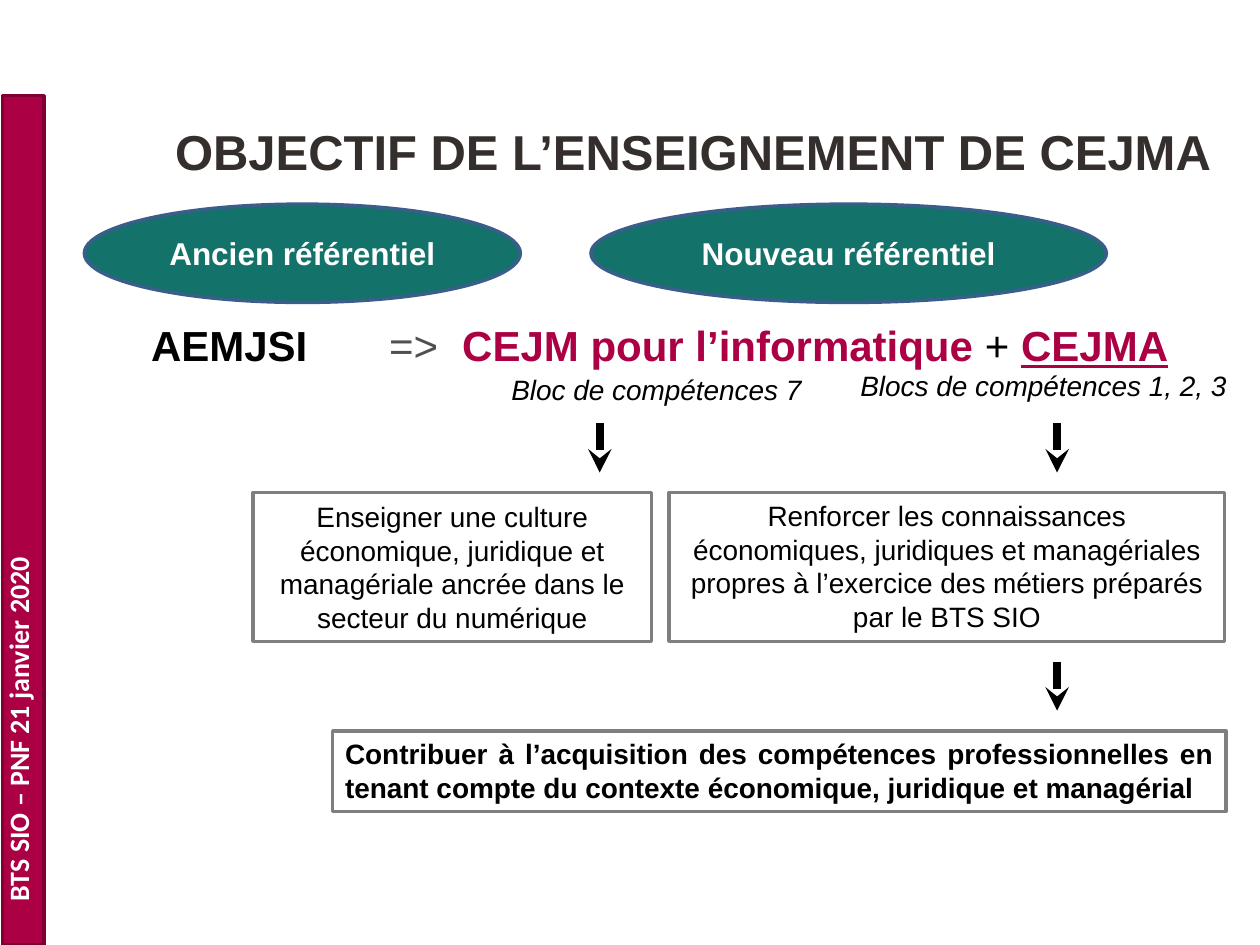
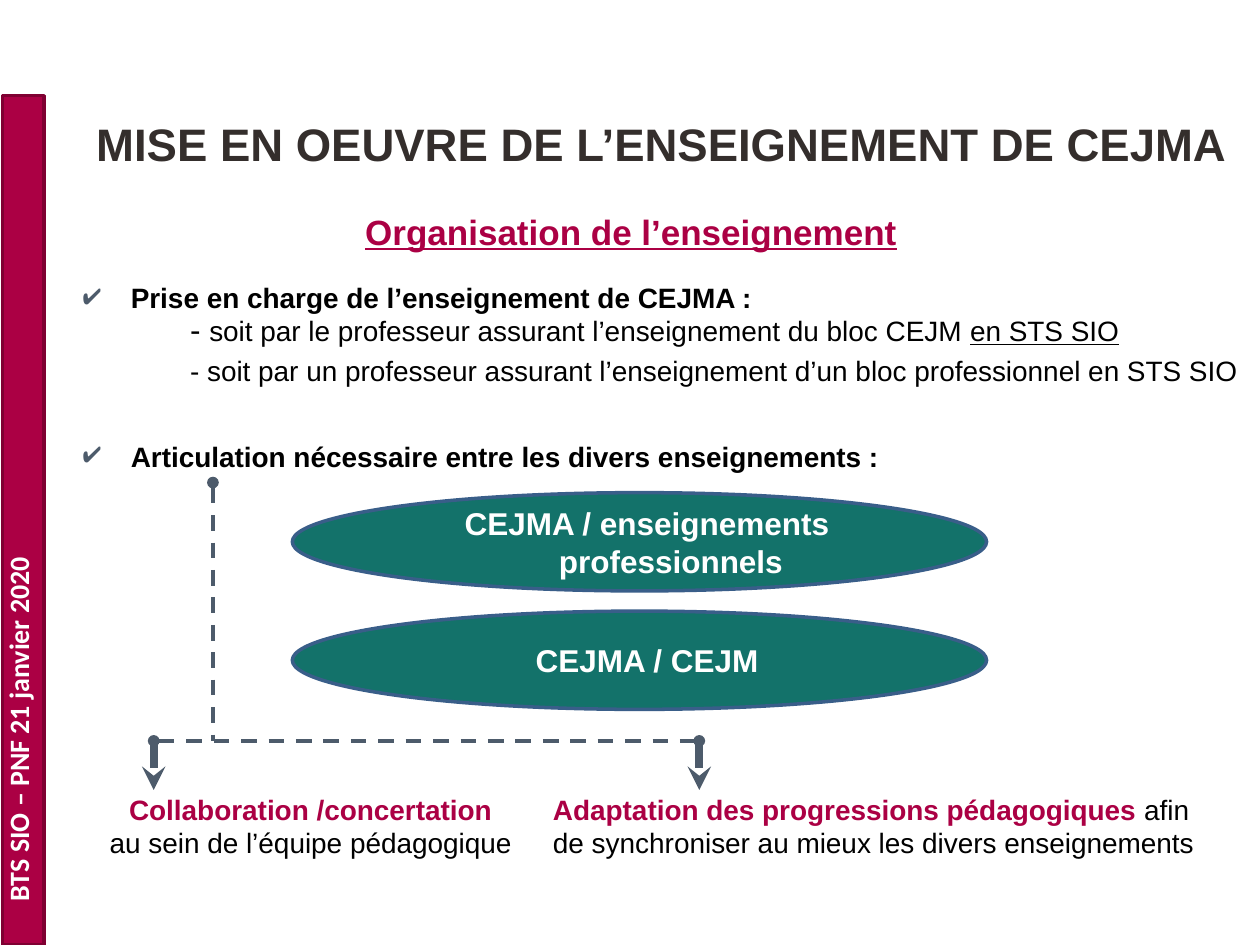
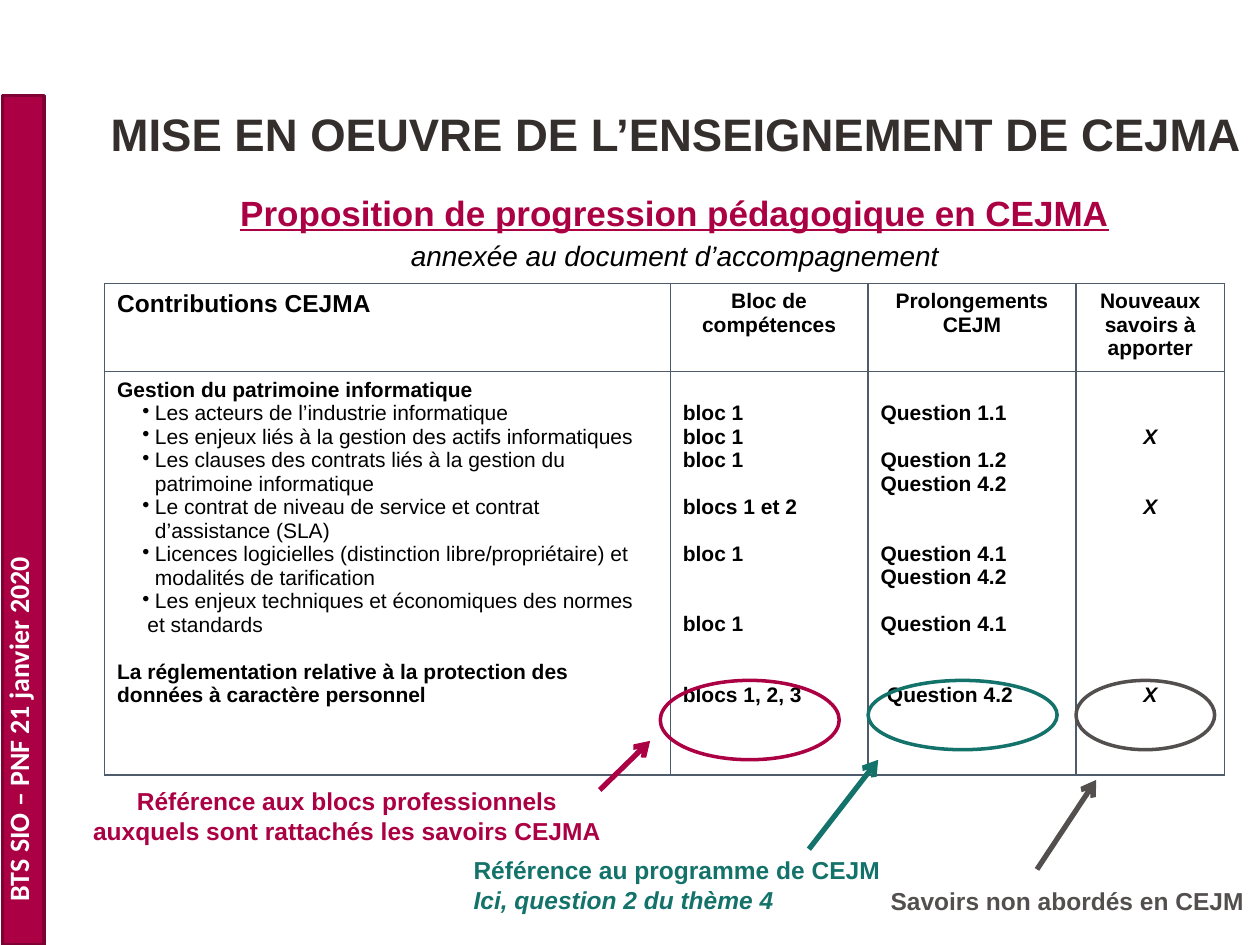
from dataclasses import dataclass
from typing import Optional

from lxml.etree import SubElement
from pptx import Presentation
from pptx.dml.color import RGBColor
from pptx.enum.dml import MSO_LINE
from pptx.enum.shapes import MSO_CONNECTOR, MSO_SHAPE
from pptx.enum.text import MSO_ANCHOR, PP_ALIGN
from pptx.oxml import parse_xml
from pptx.oxml.ns import nsdecls, qn
from pptx.util import Inches, Pt


# Colours, fonts and type sizes
@dataclass(frozen=True)
class Theme:
    crimson: str = "AB0044"
    crimson_edge: str = "7F0032"
    teal: str = "13726A"
    blue_edge: str = "395E89"
    slate: str = "4D5B6B"
    grey: str = "544F4F"
    box_edge: str = "7F7F7F"
    title: str = "342E2C"
    black: str = "000000"
    white: str = "FFFFFF"
    font: str = "Arial"
    side_font: str = "Calibri"
    title_size: int = 26
    lead_size: int = 24
    subtitle_size: int = 20
    oval_size: int = 18
    body_size: int = 16
    note_size: int = 14
    cell_size: int = 12
    cell_line: float = 13.4


THEME = Theme()


@dataclass
class Run:
    text: str
    color: Optional[str] = None
    bold: Optional[bool] = None
    italic: Optional[bool] = None
    underline: Optional[bool] = None
    size: Optional[float] = None


@dataclass
class Para:
    runs: object
    color: Optional[str] = THEME.black
    bold: Optional[bool] = None
    italic: Optional[bool] = None
    underline: Optional[bool] = None
    size: Optional[float] = THEME.body_size
    font: str = THEME.font
    align: Optional[PP_ALIGN] = None
    left: float = 0
    first: float = 0
    before: float = 0
    bullet: str = ""
    bullet_color: str = THEME.black
    tabs: tuple = ()


CENTER = PP_ALIGN.CENTER


def rgb(value):
    return RGBColor.from_string(value)


def style_font(font, style):
    for name in ("bold", "italic", "underline"):
        if getattr(style, name) is not None:
            setattr(font, name, getattr(style, name))
    if style.size:
        font.size = Pt(style.size)
    if style.color:
        font.color.rgb = rgb(style.color)


class Deck:
    def __init__(self, theme):
        self.theme = theme
        self.prs = Presentation()
        self.prs.slide_width, self.prs.slide_height = Inches(10), Inches(7.5)
        self.slide = None

    # Slide with its side band
    def new_slide(self):
        t = self.theme
        self.slide = self.prs.slides.add_slide(self.prs.slide_layouts[6])
        self.shape((0.02, 0.76, 0.33, 6.74), MSO_SHAPE.RECTANGLE, t.crimson, t.crimson_edge)
        label = self.text((-0.04, 0.35, 0.47, 6.9),
                          [Para("BTS SIO – PNF 21 janvier 2020", t.white, bold=True, font=t.side_font)])
        label.text_frame._txBody.bodyPr.set("vert", "vert270")

    def put_paras(self, frame, paras):
        for i, para in enumerate(paras):
            p = frame.paragraphs[0] if i == 0 else frame.add_paragraph()
            props = p._p.get_or_add_pPr()
            if para.left or para.first:
                props.set("marL", str(Inches(para.left)))
                props.set("indent", str(Inches(para.first)))
            if para.align is not None:
                p.alignment = para.align
            if para.before:
                p.space_before = Pt(para.before)
            if para.bullet:
                color = SubElement(props, qn("a:buClr"))
                SubElement(color, qn("a:srgbClr"), val=para.bullet_color)
                SubElement(props, qn("a:buChar"), char=para.bullet)
            if para.tabs:
                stops = SubElement(props, qn("a:tabLst"))
                for stop in para.tabs:
                    SubElement(stops, qn("a:tab"), pos=str(Inches(stop)), algn="l")
            p.font.name = para.font
            style_font(p.font, para)
            runs = [Run(para.runs)] if isinstance(para.runs, str) else para.runs
            for part in runs:
                run = p.add_run()
                run.text = part.text
                style_font(run.font, part)

    def text(self, at, paras, anchor=MSO_ANCHOR.TOP):
        box = self.slide.shapes.add_textbox(*map(Inches, at))
        box.text_frame.word_wrap = True
        box.text_frame.vertical_anchor = anchor
        self.put_paras(box.text_frame, paras)
        return box

    def title(self, at, text, size=THEME.title_size):
        self.text(at, [Para(text, self.theme.title, bold=True, size=size, align=CENTER)],
                  MSO_ANCHOR.MIDDLE)

    def shape(self, at, kind, fill, edge, paras=(), anchor=MSO_ANCHOR.MIDDLE):
        shape = self.slide.shapes.add_shape(kind, *map(Inches, at))
        shape.shadow.inherit = False
        if fill:
            shape.fill.solid()
            shape.fill.fore_color.rgb = rgb(fill)
        else:
            shape.fill.background()
        shape.line.color.rgb = rgb(edge)
        shape.line.width = Pt(2)
        shape.text_frame.word_wrap = True
        shape.text_frame.vertical_anchor = anchor
        self.put_paras(shape.text_frame, paras)

    def oval(self, at, text, left=0, first=0):
        t = self.theme
        self.shape(at, MSO_SHAPE.OVAL, t.teal, t.blue_edge,
                   [Para(text, t.white, bold=True, size=t.oval_size, align=CENTER,
                         left=left, first=first)])

    def frame(self, at, paras, anchor=MSO_ANCHOR.TOP):
        self.shape(at, MSO_SHAPE.RECTANGLE, self.theme.white, self.theme.box_edge, paras, anchor)

    def line(self, start, end, color, width, head=None, tail=None, dashed=False):
        line = self.slide.shapes.add_connector(MSO_CONNECTOR.STRAIGHT, *map(Inches, (*start, *end)))
        line.line.color.rgb = rgb(color)
        line.line.width = Pt(width)
        if dashed:
            line.line.dash_style = MSO_LINE.DASH
        props = line._element.spPr
        for tag, kind in (("a:headEnd", head), ("a:tailEnd", tail)):
            if kind:
                SubElement(props.get_or_add_ln(), qn(tag), type=kind)
        SubElement(props, qn("a:effectLst"))

    def down_arrow(self, x, y, color):
        self.line((x, y), (x, y + 0.39), color, 4.5, tail="stealth")

    # Bordered table; each cell is (paragraphs, lines left free above)
    def table(self, at, widths, heights, rows):
        table = self.slide.shapes.add_table(len(rows), len(widths), *map(Inches, at)).table
        table.first_row = table.horz_banding = False
        for column, width in zip(table.columns, widths):
            column.width = Inches(width)
        for row, height in zip(table.rows, heights):
            row.height = Inches(height)
        for r, row in enumerate(rows):
            for c, (paras, skipped) in enumerate(row):
                cell = table.cell(r, c)
                cell.fill.background()
                cell.margin_top = Inches(0.05) + Pt(skipped * self.theme.cell_line)
                self.put_paras(cell.text_frame, paras)
                props = cell._tc.get_or_add_tcPr()
                for i, side in enumerate(("lnL", "lnR", "lnT", "lnB")):
                    props.insert(i, parse_xml(
                        f'<a:{side} {nsdecls("a")} w="12700"><a:solidFill>'
                        f'<a:srgbClr val="{self.theme.slate}"/></a:solidFill></a:{side}>'))


def cell_column(entries, **style):
    """Place each (line number, text) entry on its line of the cell."""
    paras, previous = [], entries[0][0] - 1
    for number, text in entries:
        gap = (number - previous - 1) * THEME.cell_line
        paras.append(Para(text, bold=True, size=THEME.cell_size, before=gap, **style))
        previous = number
    return paras, entries[0][0]


# Slide 1: aim of the course
def objective(deck):
    t = deck.theme
    deck.new_slide()
    deck.title((1, 0.84, 9, 0.71), "OBJECTIF DE L’ENSEIGNEMENT DE CEJMA", 28)
    deck.text((0.35, 2.49, 9.41, 0.63), [Para([
        Run("\tAEMJSI", bold=True),
        Run("\t=>", t.grey),
        Run("\tCEJM pour l’informatique ", t.crimson, bold=True),
        Run("+ "),
        Run("CEJMA", t.crimson, bold=True, underline=True),
    ], size=t.lead_size, tabs=(0.75, 2.64, 3.22))])
    deck.oval((0.67, 1.62, 3.46, 0.78), "Ancien référentiel")
    deck.oval((4.69, 1.62, 4.09, 0.78), "Nouveau référentiel")
    deck.text((3.96, 2.91, 2.58, 0.37), [Para("Bloc de compétences 7", italic=True)])
    deck.text((6.73, 2.88, 3.27, 0.37), [Para("Blocs de compétences 1, 2, 3", italic=True)])
    for x, y in ((4.76, 3.36), (8.39, 3.36), (8.39, 5.25)):
        deck.down_arrow(x, y, t.black)
    deck.frame((2.01, 3.91, 3.16, 1.18), [Para(
        "Enseigner une culture économique, juridique et managériale ancrée dans le "
        "secteur du numérique", align=CENTER)], MSO_ANCHOR.MIDDLE)
    deck.frame((5.31, 3.91, 4.41, 1.18), [Para(text, align=CENTER) for text in (
        "Renforcer les connaissances",
        "économiques, juridiques et managériales",
        "propres à l’exercice des métiers préparés par le BTS SIO")])
    deck.frame((2.64, 5.8, 7.09, 0.64), [Para(
        "Contribuer à l’acquisition des compétences professionnelles en tenant compte du "
        "contexte économique, juridique et managérial", bold=True, align=PP_ALIGN.JUSTIFY)])


# Slide 2: how the teaching is organised
def organisation(deck):
    t = deck.theme
    deck.new_slide()
    deck.title((0.51, 0.84, 9.49, 0.59), "MISE EN OEUVRE DE L’ENSEIGNEMENT DE CEJMA")
    deck.text((2.8, 1.62, 4.49, 0.44), [Para("Organisation de l’enseignement", t.crimson,
                                             bold=True, underline=True, size=t.subtitle_size)])
    for y, heading in ((2.18, "Prise en charge de l’enseignement de CEJMA :"),
                       (3.44, "Articulation nécessaire entre les divers enseignements :")):
        deck.text((0.35, y, 8.9, 0.37), [Para(heading, bold=True, left=0.59, first=-0.38,
                                              bullet="✔", bullet_color=t.slate)])
    deck.text((0.91, 2.41, 9.09, 0.79), [
        Para([Run("- ", size=18),
              Run("soit par le professeur assurant l’enseignement du bloc CEJM "),
              Run("en STS SIO", underline=True)], left=0.88, first=-0.38),
        Para("- soit par un professeur assurant l’enseignement d’un bloc professionnel en STS SIO",
             left=0.88, first=-0.38, before=3.6)])

    # Pairings and their two consequences
    for y, pairing in ((3.91, "CEJMA / enseignements professionnels"), (4.85, "CEJMA / CEJM")):
        deck.oval((2.32, y, 5.51, 0.78), pairing, left=0.5, first=-0.38)
    fork_y, left_x, right_x = 5.88, 1.22, 5.55
    deck.line((1.69, 3.83), (1.69, fork_y), t.slate, 2.25, head="oval", dashed=True)
    deck.line((left_x, fork_y), (right_x, fork_y), t.slate, 2.25, "oval", "oval", dashed=True)
    for x in (left_x, right_x):
        deck.down_arrow(x, fork_y, t.slate)
    deck.text((0.59, 6.24, 3.75, 0.66), [
        Para("Collaboration /concertation", t.crimson, bold=True, align=CENTER),
        Para("au sein de l’équipe pédagogique", align=CENTER)])
    deck.text((4.29, 6.24, 5.41, 0.66), [Para([
        Run("Adaptation des progressions pédagogiques ", t.crimson, bold=True),
        Run("afin de synchroniser au mieux les divers enseignements")])])


# Slide 3: proposed progression
def progression(deck):
    t = deck.theme
    deck.new_slide()
    deck.title((0.51, 0.76, 9.72, 0.59), "MISE EN OEUVRE DE L’ENSEIGNEMENT DE CEJMA")
    deck.text((0.51, 1.47, 9.49, 0.76), [
        Para("Proposition de progression pédagogique en CEJMA", t.crimson, bold=True,
             underline=True, size=t.subtitle_size, align=CENTER, left=0.2),
        Para("annexée au document d’accompagnement", italic=True, align=CENTER,
             left=0.2, before=3)])

    # Contributions table
    header = [([Para("Contributions CEJMA", bold=True, size=t.note_size)], 0)]
    header += [([Para(text, bold=True, size=t.cell_size, align=CENTER)], 0) for text in (
        "Bloc de compétences", "Prolongements CEJM", "Nouveaux savoirs à apporter")]
    topics = [Para("Gestion du patrimoine informatique", bold=True, size=t.cell_size)]
    topics += [Para(text, size=t.cell_size, left=0.3, first=-0.1, bullet="•") for text in (
        "Les acteurs de l’industrie informatique",
        "Les enjeux liés à la gestion des actifs informatiques",
        "Les clauses des contrats liés à la gestion du patrimoine informatique",
        "Le contrat de niveau de service et contrat d’assistance (SLA)",
        "Licences logicielles (distinction libre/propriétaire) et modalités de tarification",
        "Les enjeux techniques et économiques des normes")]
    topics += [
        Para("et standards", size=t.cell_size, left=0.24),
        Para("La réglementation relative à la protection des données à caractère personnel",
             bold=True, size=t.cell_size, before=t.cell_line)]
    blocks = cell_column([(1, "bloc 1"), (2, "bloc 1"), (3, "bloc 1"), (5, "blocs 1 et 2"),
                          (7, "bloc 1"), (10, "bloc 1"), (13, "blocs 1, 2, 3")])
    questions = cell_column([(1, "Question 1.1"), (3, "Question 1.2"), (4, "Question 4.2"),
                             (7, "Question 4.1"), (8, "Question 4.2"), (10, "Question 4.1"),
                             (13, "Question 4.2")])
    questions[0][-1].left = 0.05
    new_topics = cell_column([(line, "X") for line in (2, 5, 13)], italic=True, align=CENTER)
    deck.table((0.83, 2.25, 8.89, 3.9), (4.49, 1.57, 1.65, 1.18), (0.7, 3.2),
               [header, [(topics, 0), blocks, questions, new_topics]])

    # Circled references, their arrows and their notes
    callouts = (
        (t.crimson, (5.24, 5.4, 1.42, 0.63), (5.16, 5.88), (4.76, 6.27), (0.59, 6.19, 4.33, 0.57),
         ("Référence aux blocs professionnels", "auxquels sont rattachés les savoirs CEJMA"),
         CENTER),
        (t.teal, (6.89, 5.4, 1.5, 0.55), (6.97, 6.03), (6.42, 6.74), (3.66, 6.74, 3.62, 0.57),
         ("Référence au programme de CEJM", "Ici, question 2 du thème 4"), None),
        (t.grey, (8.54, 5.4, 1.1, 0.55), (8.7, 6.19), (8.23, 6.9), (6.97, 6.98, 3.03, 0.34),
         ("Savoirs non abordés en CEJM",), None))
    for color, ring, tip, foot, note, lines, align in callouts:
        deck.shape(ring, MSO_SHAPE.OVAL, None, color)
        deck.line(tip, foot, color, 3, head="arrow")
        deck.text(note, [Para(text, color, bold=True, size=t.note_size, align=align,
                              italic=text.startswith("Ici") or None) for text in lines])


def main():
    deck = Deck(THEME)
    objective(deck)
    organisation(deck)
    progression(deck)
    deck.prs.save("out.pptx")


if __name__ == "__main__":
    main()
